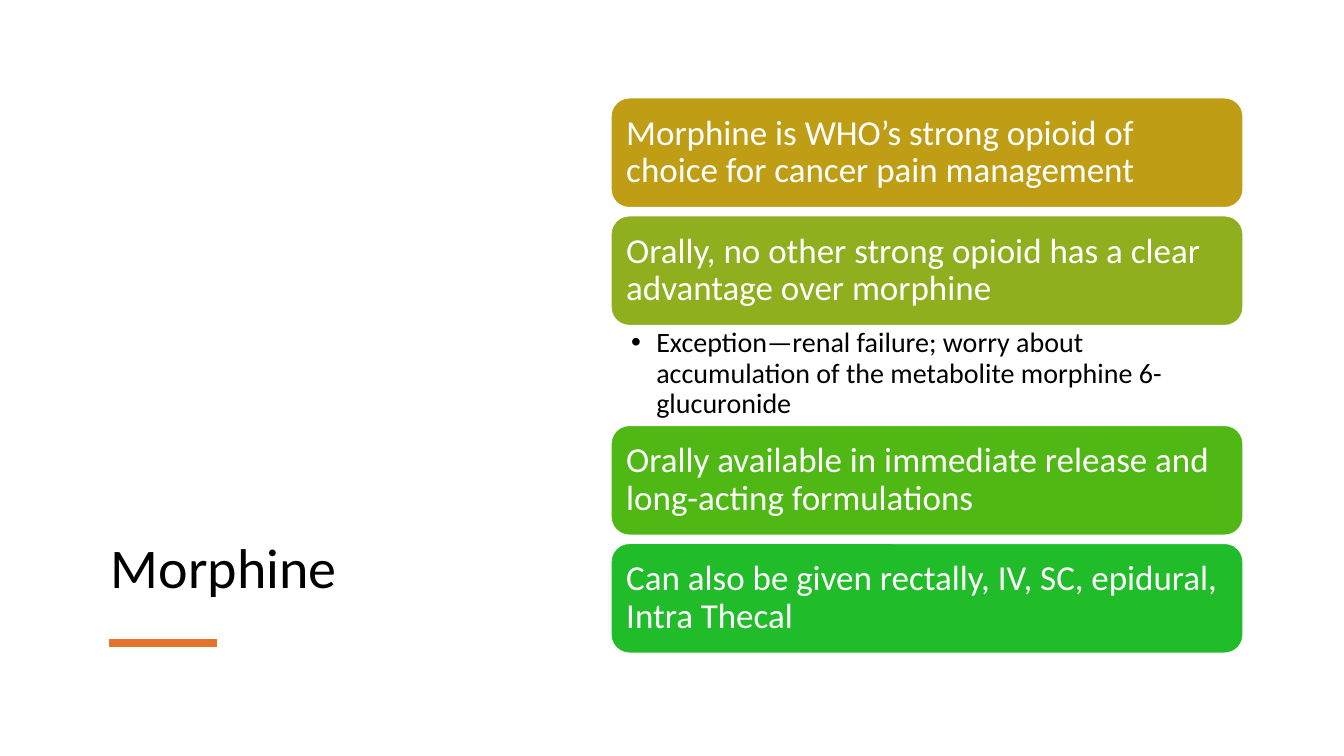
from lxml.etree import SubElement
from pptx import Presentation
from pptx.dml.color import RGBColor
from pptx.enum.shapes import MSO_CONNECTOR as CONN, MSO_SHAPE as SHAPE
from pptx.enum.text import MSO_ANCHOR as ANCHOR, MSO_AUTO_SIZE as AUTO, PP_ALIGN as ALIGN
from pptx.oxml.ns import qn
from pptx.util import Inches, Pt

CARD_H = 1.09
GAP = 0.08
NOTE_H = 0.99
CARDS = [
    ("BF9E15", "Morphine is WHO’s strong opioid of choice for cancer pain management", None),
    ("8FAF1F", "Orally, no other strong opioid has a clear advantage over morphine",
     "Exception—renal failure; worry about accumulation of the metabolite morphine 6-glucuronide"),
    ("50B814", "Orally available in immediate release and long-acting formulations", None),
    ("21BC2A", "Can also be given rectally, IV, SC, epidural, Intra Thecal", None),
]


def rgb(color):
    return RGBColor.from_string(color)


def write(tf, text, size, color, anchor, insets):
    tf.word_wrap = True
    tf.auto_size = AUTO.NONE
    tf.vertical_anchor = anchor
    tf.margin_left, tf.margin_top, tf.margin_right, tf.margin_bottom = map(Inches, insets)
    p = tf.paragraphs[0]
    p.alignment = ALIGN.LEFT
    p.line_spacing = 0.9
    r = p.add_run()
    r.text = text
    r.font.name = "Calibri"
    r.font.size = Pt(size)
    r.font.color.rgb = rgb(color)
    return p


def add_title(s, x, y, w, h):
    sp = s.shapes.title
    sp.left, sp.top, sp.width, sp.height = map(Inches, (x, y, w, h))
    write(sp.text_frame, "Morphine", 40, "000000", ANCHOR.BOTTOM, (0.1, 0.05, 0.1, 0.05))
    rule_x, rule_y = x + 0.08, y + h + 0.37
    rule = s.shapes.add_connector(
        CONN.STRAIGHT, *map(Inches, (rule_x, rule_y, rule_x + 1.07, rule_y)))
    rule.line.color.rgb = rgb("E77229")
    rule.line.width = Pt(6)
    SubElement(rule._element.spPr, qn("a:effectLst"))


def add_card(s, x, y, w, color, text):
    sp = s.shapes.add_shape(SHAPE.ROUNDED_RECTANGLE, *map(Inches, (x, y, w, CARD_H)))
    sp.shadow.inherit = False
    sp.fill.solid()
    sp.fill.fore_color.rgb = rgb(color)
    sp.line.color.rgb = rgb("FFFFFF")
    sp.line.width = Pt(1)
    write(sp.text_frame, text, 25, "FFFFFF", ANCHOR.MIDDLE, (0.1,) * 4)


def add_note(s, x, y, w, text):
    sp = s.shapes.add_textbox(*map(Inches, (x, y, w, NOTE_H)))
    p = write(sp.text_frame, text, 20, "000000", ANCHOR.TOP, (0.2, 0.03, 0.19, 0.03))
    pPr = p._p.get_or_add_pPr()
    pPr.set("marL", str(Inches(0.25)))
    pPr.set("indent", str(-Inches(0.25)))
    SubElement(pPr, qn("a:buFont"), typeface="Arial")
    SubElement(pPr, qn("a:buChar"), char="•")


def add_cards(s, x, y, w):
    for color, text, note in CARDS:
        add_card(s, x, y, w, color, text)
        y += CARD_H
        if note:
            add_note(s, x, y, w, note)
            y += NOTE_H
        else:
            y += GAP


def main():
    prs = Presentation()
    prs.slide_width, prs.slide_height = Inches(13.33), Inches(7.5)
    s = prs.slides.add_slide(prs.slide_layouts[5])
    add_title(s, 1, 1, 3.88, 5.01)
    add_cards(s, 6.06, 0.97, 6.27)
    prs.save("out.pptx")


if __name__ == "__main__":
    main()
